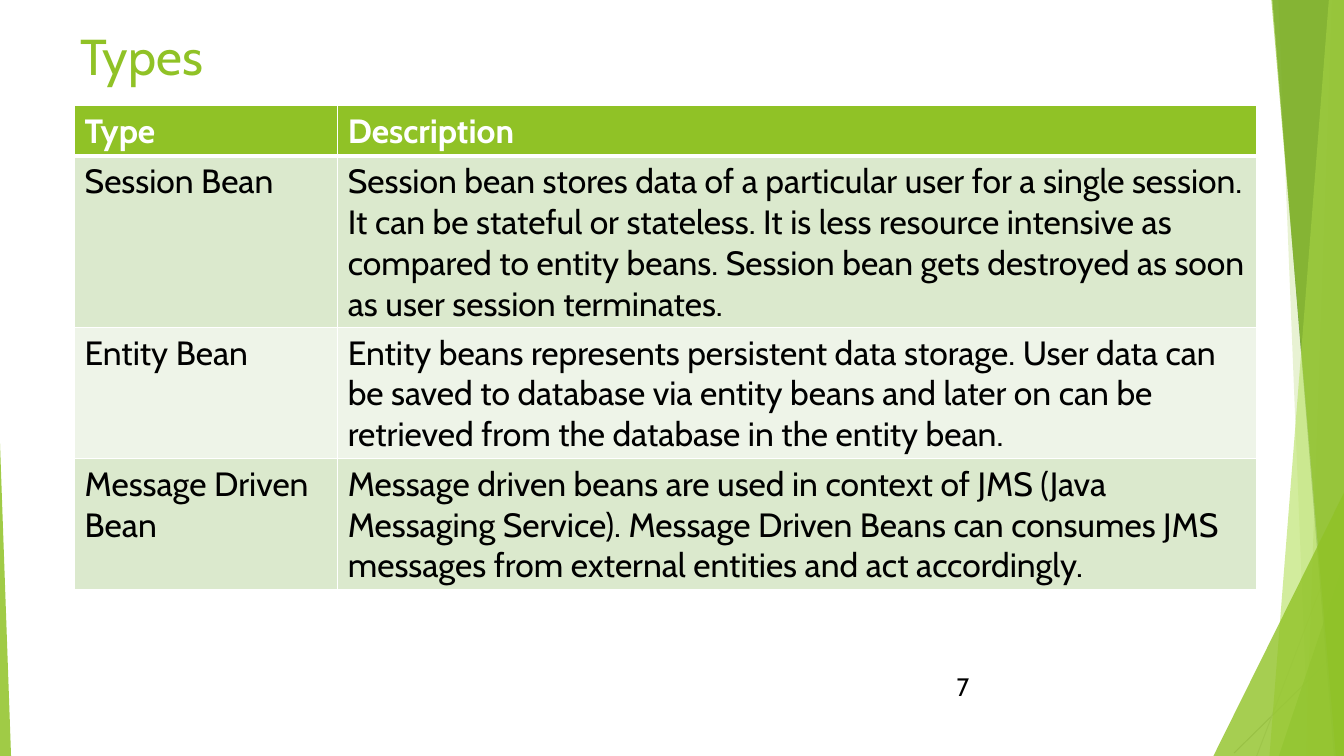
from dataclasses import dataclass

from lxml.etree import SubElement
from pptx import Presentation
from pptx.dml.color import RGBColor
from pptx.enum.shapes import MSO_CONNECTOR, MSO_SHAPE
from pptx.enum.text import MSO_ANCHOR
from pptx.oxml.ns import qn
from pptx.util import Inches, Pt


@dataclass(frozen=True)
class Theme:
    font: str = "Cabin"
    green: str = "90C226"
    mid_green: str = "54A021"
    dark_green: str = "3F7819"
    light_green: str = "C0E474"
    band_dark: str = "DBE9CD"
    band_light: str = "EEF4E8"
    black: str = "000000"
    white: str = "FFFFFF"
    line_dark: str = "BFBFBF"
    line_light: str = "D9D9D9"
    title_size: int = 36
    table_size: int = 24
    number_size: int = 18


THEME = Theme()
RIGHT_EDGE, BOTTOM_EDGE = 13.33, 7.51

RAYS = [
    ((13.3, 6.43), (12.24, 7.47), THEME.line_dark),
    ((13.14, 5.72), (12.35, 7.8), THEME.line_light),
]
# Each panel: top left x, bottom left x, colour, opacity in percent
BACK_PANELS = [
    (13.21, 12.95, THEME.green, 30),
    (12.68, 12.98, THEME.green, 20),
]
FRONT_PANELS = [
    (12.62, 13.23, THEME.dark_green, 70),
    (13.18, 12.59, THEME.light_green, 70),
    (12.61, 13.25, THEME.green, 65),
]
TABLE_ROWS = [
    ("Type", "Description"),
    ("Session Bean",
     "Session bean stores data of a particular user for a single session. "
     "It can be stateful or stateless. It is less resource intensive as "
     "compared to entity beans. Session bean gets destroyed as soon as user "
     "session terminates."),
    ("Entity Bean",
     "Entity beans represents persistent data storage. User data can be saved "
     "to database via entity beans and later on can be retrieved from the "
     "database in the entity bean."),
    ("Message Driven Bean",
     "Message driven beans are used in context of JMS (Java Messaging "
     "Service). Message Driven Beans can consumes JMS messages from external "
     "entities and act accordingly."),
]


class SlideBuilder:
    def __init__(self, slide, theme):
        self.slide = slide
        self.theme = theme

    def fill(self, shape, color, opacity):
        """Give a shape a partly transparent fill without line or shadow."""
        shape.shadow.inherit = False
        shape.line.fill.background()
        shape.fill.solid()
        shape.fill.fore_color.rgb = RGBColor.from_string(color)
        color_element = shape.fill._xPr.find(qn("a:solidFill"))[0]
        SubElement(color_element, qn("a:alpha"), val=str(opacity * 1000))

    def ray(self, start, end, color):
        connector = self.slide.shapes.add_connector(
            MSO_CONNECTOR.STRAIGHT, *map(Inches, start + end))
        connector.line.color.rgb = RGBColor.from_string(color)
        connector.line.width = Pt(0.75)
        SubElement(connector._element.spPr, qn("a:effectLst"))

    def panel(self, top_x, bottom_x, color, opacity):
        """Draw a full-height panel with a slanted left side."""
        builder = self.slide.shapes.build_freeform(
            Inches(top_x), Inches(0))
        corners = [(RIGHT_EDGE, 0), (RIGHT_EDGE, BOTTOM_EDGE),
                   (bottom_x, BOTTOM_EDGE)]
        builder.add_line_segments(
            [(Inches(x), Inches(y)) for x, y in corners], close=True)
        self.fill(builder.convert_to_shape(), color, opacity)

    def triangle(self, left, top, width, apex, color, opacity):
        """Draw a triangle that stands on the bottom edge."""
        shape = self.slide.shapes.add_shape(
            MSO_SHAPE.ISOSCELES_TRIANGLE, Inches(left), Inches(top),
            Inches(width), Inches(BOTTOM_EDGE - top))
        shape.adjustments[0] = apex
        self.fill(shape, color, opacity)

    def style(self, paragraph, size, color, bold=False):
        font = paragraph.font
        font.name = self.theme.font
        font.size = Pt(size)
        font.bold = bold
        font.color.rgb = RGBColor.from_string(color)

    def text(self, content, box, size, color, anchor=MSO_ANCHOR.TOP):
        frame = self.slide.shapes.add_textbox(*map(Inches, box)).text_frame
        frame.word_wrap = True
        frame.vertical_anchor = anchor
        frame.text = content
        self.style(frame.paragraphs[0], size, color)

    def borders(self, cell, bottom_width):
        properties = cell._tc.get_or_add_tcPr()
        widths = {"a:lnL": 1, "a:lnR": 1, "a:lnT": 1, "a:lnB": bottom_width}
        for position, (tag, width) in enumerate(widths.items()):
            line = SubElement(properties, qn(tag), w=str(Pt(width)))
            properties.insert(position, line)
            fill = SubElement(line, qn("a:solidFill"))
            SubElement(fill, qn("a:srgbClr"), val=self.theme.white)

    def table(self, rows, left, top, column_widths, row_height):
        """Add a banded table; rows grow to fit their text."""
        theme = self.theme
        table = self.slide.shapes.add_table(
            len(rows), len(column_widths), Inches(left), Inches(top),
            Inches(sum(column_widths)),
            Inches(row_height * len(rows))).table
        for column, width in zip(table.columns, column_widths):
            column.width = Inches(width)
        for row_index, row in enumerate(rows):
            header = row_index == 0
            band = theme.band_dark if row_index % 2 else theme.band_light
            for column_index, content in enumerate(row):
                cell = table.cell(row_index, column_index)
                cell.text = content
                cell.fill.solid()
                cell.fill.fore_color.rgb = RGBColor.from_string(
                    theme.green if header else band)
                self.style(cell.text_frame.paragraphs[0], theme.table_size,
                           theme.white if header else theme.black, header)
                self.borders(cell, 3 if header else 1)


def main():
    presentation = Presentation()
    presentation.slide_width = Inches(13.33)
    presentation.slide_height = Inches(7.5)
    slide = presentation.slides.add_slide(presentation.slide_layouts[6])
    builder = SlideBuilder(slide, THEME)

    for ray in RAYS:
        builder.ray(*ray)
    for panel in BACK_PANELS:
        builder.panel(*panel)
    builder.triangle(12.68, 5.54, 0.66, 1, THEME.mid_green, 72)
    for panel in FRONT_PANELS:
        builder.panel(*panel)
    builder.triangle(12.03, 4.89, 1.3, 1, THEME.green, 80)
    builder.triangle(0, 4.4, 0.11, 0, THEME.green, 85)

    builder.text("Types", (0.7, 0.18, 11.76, 0.73), THEME.title_size,
                 THEME.green, MSO_ANCHOR.MIDDLE)
    builder.table(TABLE_ROWS, 0.74, 1.05, (2.61, 9.11), 0.41)
    builder.text("7", (9.39, 6.61, 0.75, 0.4), THEME.number_size, THEME.black)
    presentation.save("out.pptx")


if __name__ == "__main__":
    main()
